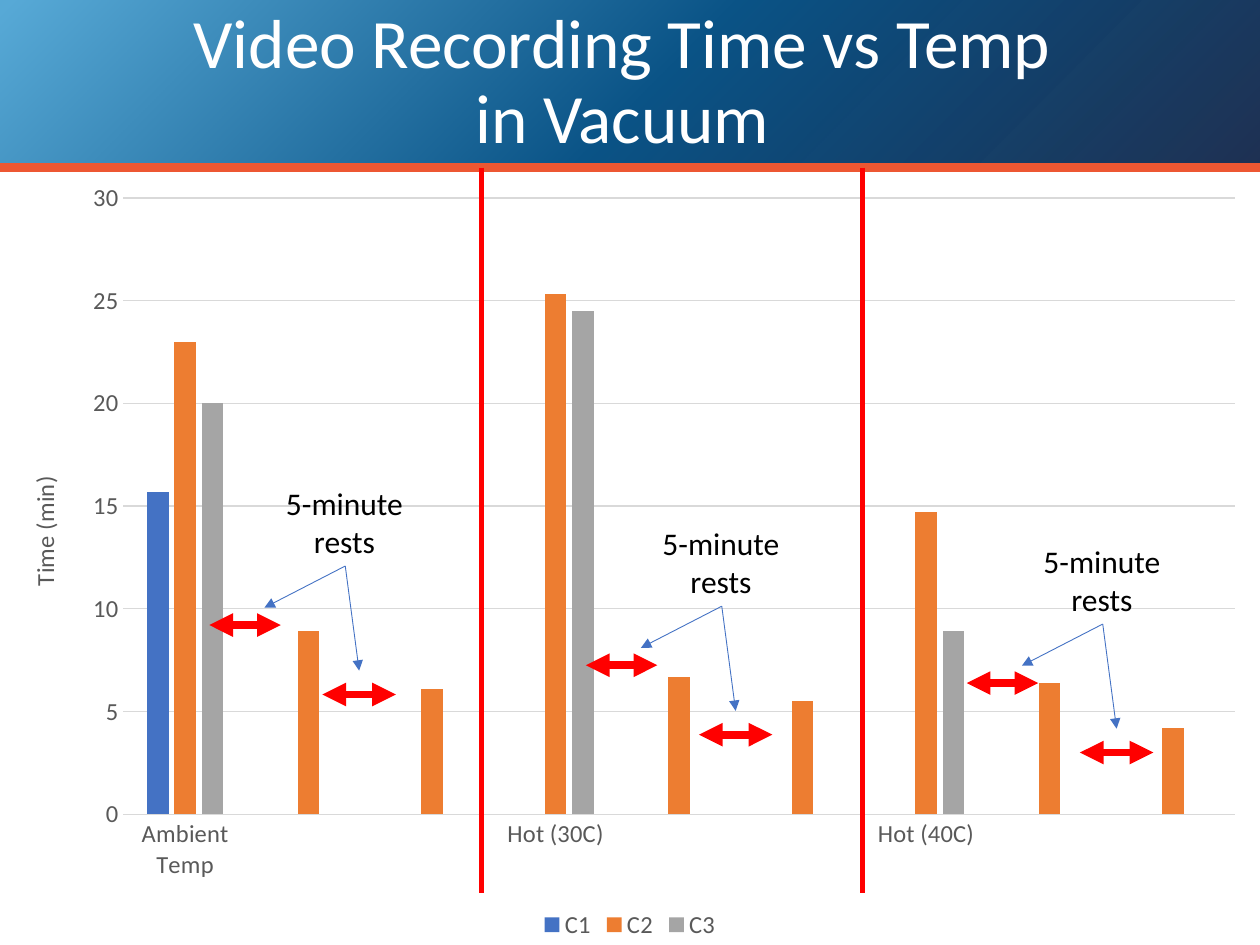
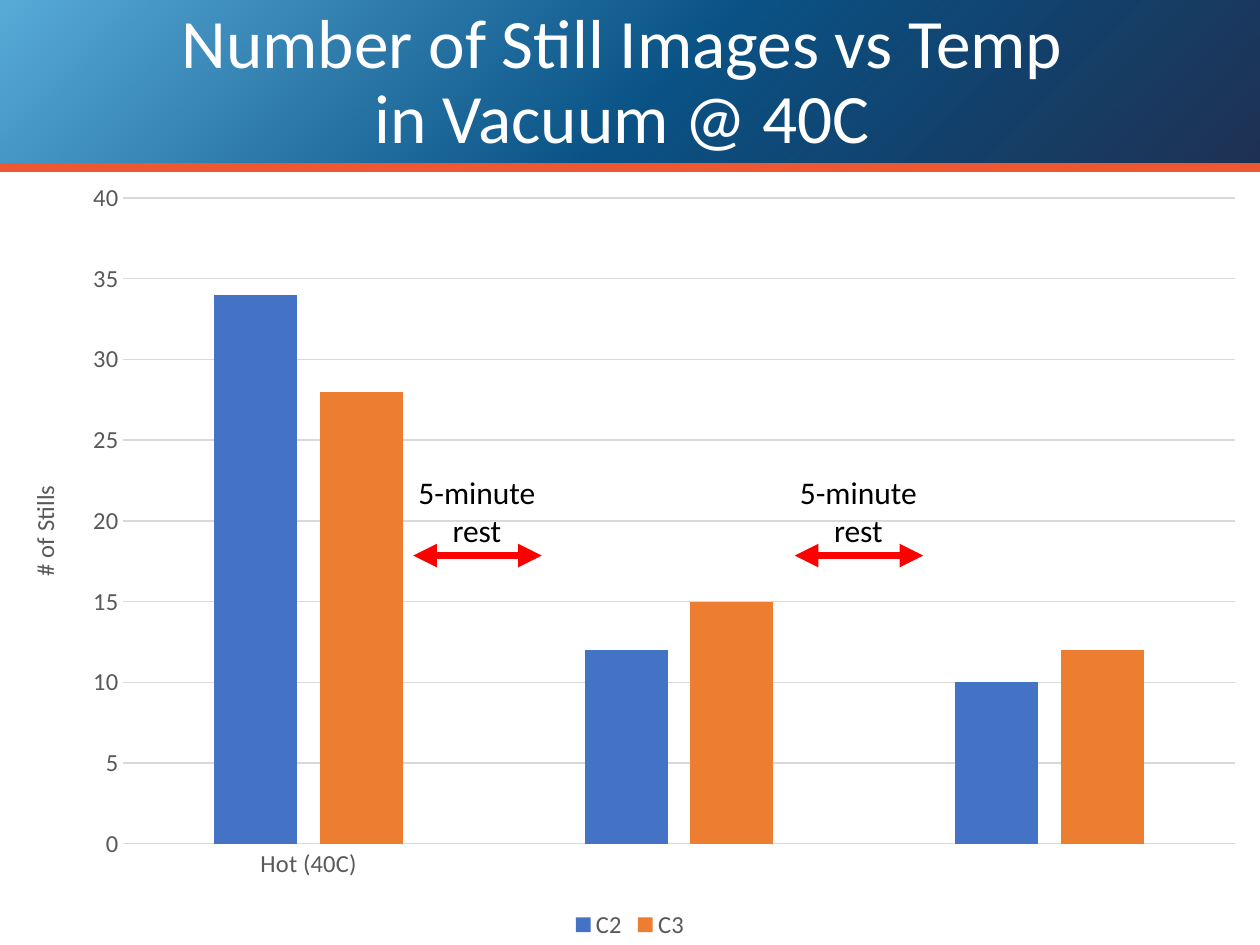
"""Build two slides charting camera endurance against temperature in vacuum."""
from lxml import etree
from pptx import Presentation
from pptx.chart import data as chart_data
from pptx.dml.color import RGBColor
from pptx.enum import chart as chart_enum, shapes, text
from pptx.oxml import parse_xml
from pptx.oxml.ns import nsdecls, qn
from pptx.util import Cm, Pt

FONT = "Calibri"
HEX = {
    "white": "FFFFFF", "black": "000000", "grey": "595959", "grid": "D9D9D9",
    "navy": "192C4E", "ocean": "0A5386", "sky": "57A9D6", "rule": "ED5732",
    "red": "FF0000", "blue": "4472C4", "orange": "ED7D31", "silver": "A5A5A5",
}
COLORS = {name: RGBColor.from_string(value) for name, value in HEX.items()}


def add_line(slide, start, end, color, width, arrows=()):
    points = [Cm(value) for value in (*start, *end)]
    connector = slide.shapes.add_connector(shapes.MSO_CONNECTOR.STRAIGHT, *points)
    connector.line.color.rgb = COLORS[color]
    connector.line.width = Pt(width)
    properties = connector.element.spPr
    for arrow in arrows:
        etree.SubElement(properties.find(qn("a:ln")), qn(f"a:{arrow}"), type="triangle")
    etree.SubElement(properties, qn("a:effectLst"))
    return connector


def add_label(slide, left, top, wording):
    box = slide.shapes.add_textbox(Cm(left), Cm(top), Cm(3.07), Cm(1.8))
    box.text_frame.word_wrap = True
    box.text_frame.text = wording
    paragraph = box.text_frame.paragraphs[0]
    paragraph.alignment = text.PP_ALIGN.CENTER
    paragraph.font.name = FONT
    paragraph.font.size = Pt(18)
    paragraph.font.color.rgb = COLORS["black"]


presentation = Presentation()
presentation.slide_width, presentation.slide_height = Cm(25.4), Cm(19.05)
layout = presentation.slide_layouts[5]

pages = [
    {
        "title": "Video Recording Time vs Temp in Vacuum",
        "axis": "Time (min)", "maximum": 30, "plot_height": 0.793,
        "categories": ["Ambient Temp", "", "", "Hot (30C)", "", "", "Hot (40C)", "", ""],
        "series": [
            ("C1", "blue", [15.7] + [None] * 8),
            ("C2", "orange", [23, 8.9, 6.1, 25.3, 6.7, 5.5, 14.7, 6.4, 4.2]),
            ("C3", "silver", [20, None, None, 24.5, None, None, 8.9, None, None]),
        ],
        "label": "5-minute rests",
        "labels": [(5.41, 9.63), (13, 10.44), (20.68, 10.8)],
        "rests": [(-1.19, 0.25, 2.97), (1.09, 2.57, 4.37)],
        "leaders": [(-0.08, 2.62), (1.83, 3.89)],
        "dividers": [9.7, 17.38],
    },
    {
        "title": "Number of Still Images vs Temp in Vacuum @ 40C",
        "axis": "# of Stills", "maximum": 40, "plot_height": 0.831,
        "categories": ["Hot (40C)", "", ""],
        "series": [("C2", "blue", [34, 12, 10]), ("C3", "orange", [28, 15, 12])],
        "label": "5-minute rest",
        "labels": [(8.08, 9.42), (15.77, 9.42)],
        "rests": [(0.25, 2.84, 1.78)],
        "leaders": [],
        "dividers": [],
    },
]
slides = [presentation.slides.add_slide(layout) for page in pages]

band = slides[0].shapes.add_shape(shapes.MSO_SHAPE.RECTANGLE, 0, 0, Cm(25.4), Cm(3.3))
band.shadow.inherit = False
band.line.fill.background()
stops = "".join(
    f'<a:gs pos="{position}000"><a:srgbClr val="{HEX[color]}">'
    f'<a:alpha val="{alpha}000"/></a:srgbClr></a:gs>'
    for position, color, alpha in ((0, "navy", 97), (48, "ocean", 100), (99, "sky", 100))
)
band.element.spPr.insert(2, parse_xml(
    f'<a:gradFill {nsdecls("a")} rotWithShape="1"><a:gsLst>{stops}</a:gsLst>'
    '<a:path path="circle"><a:fillToRect l="100000" t="100000"/></a:path></a:gradFill>'
))
rule = add_line(slides[0], (0, 3.38), (25.4, 3.38), "rule", 5)
for index, shape in enumerate((band, rule), start=2):
    layout.shapes.element.insert(index, shape.element)

for slide, page in zip(slides, pages):
    title = slide.shapes.title
    title.left, title.top, title.width, title.height = Cm(3.17), 0, Cm(18.75), Cm(3.38)
    title.text_frame.text = page["title"]
    title.text_frame.auto_size = text.MSO_AUTO_SIZE.NONE
    title.text_frame.vertical_anchor = text.MSO_ANCHOR.MIDDLE
    paragraph = title.text_frame.paragraphs[0]
    paragraph.alignment = text.PP_ALIGN.CENTER
    paragraph.line_spacing = 0.9
    paragraph.font.name = FONT
    paragraph.font.size = Pt(39.6)
    paragraph.font.color.rgb = COLORS["white"]

    table = chart_data.CategoryChartData()
    table.categories = page["categories"]
    for name, color, values in page["series"]:
        table.add_series(name, values)
    chart = slide.shapes.add_chart(
        chart_enum.XL_CHART_TYPE.COLUMN_CLUSTERED, 0, Cm(3.38), Cm(25.4), Cm(15.67), table
    ).chart
    chart.has_title = False
    chart.font.name = FONT
    chart.font.size = Pt(14)
    chart.font.color.rgb = COLORS["grey"]
    chart.has_legend = True
    chart.legend.position = chart_enum.XL_LEGEND_POSITION.BOTTOM
    chart.legend.include_in_layout = False
    plot = chart.plots[0]
    plot.gap_width, plot.overlap = 219, -27
    plot.vary_by_categories = False
    for series, (name, color, values) in zip(plot.series, page["series"]):
        series.format.fill.solid()
        series.format.fill.fore_color.rgb = COLORS[color]

    value_axis, category_axis = chart.value_axis, chart.category_axis
    for axis in (value_axis, category_axis):
        axis.major_tick_mark = chart_enum.XL_TICK_MARK.NONE
    value_axis.minimum_scale, value_axis.maximum_scale = 0, page["maximum"]
    value_axis.major_unit = 5
    value_axis.format.line.fill.background()
    for line in (value_axis.major_gridlines.format.line, category_axis.format.line):
        line.color.rgb = COLORS["grid"]
        line.width = Pt(0.75)
    value_axis.axis_title.text_frame.text = page["axis"]
    axis_font = value_axis.axis_title.text_frame.paragraphs[0].font
    axis_font.name, axis_font.size, axis_font.bold = FONT, Pt(14), False
    axis_font.color.rgb = COLORS["grey"]

    plot_area = chart.element.chart.plotArea
    for old_layout in plot_area.findall(qn("c:layout")):
        plot_area.remove(old_layout)
    plot_layout = etree.Element(qn("c:layout"))
    manual = etree.SubElement(plot_layout, qn("c:manualLayout"))
    for tag, value in (
        ("layoutTarget", "inner"), ("xMode", "edge"), ("yMode", "edge"),
        ("x", 0.098), ("y", 0.039), ("w", 0.882), ("h", page["plot_height"]),
    ):
        etree.SubElement(manual, qn(f"c:{tag}"), val=str(value))
    plot_area.insert(0, plot_layout)

    for left, top in page["labels"]:
        add_label(slide, left, top, page["label"])
        for start, end, drop in page["rests"]:
            add_line(slide, (left + start, top + drop), (left + end, top + drop),
                     "red", 4.5, ("headEnd", "tailEnd"))
        for across, drop in page["leaders"]:
            add_line(slide, (left + 1.55, top + 1.78), (left + across, top + drop),
                     "blue", 0.5, ("tailEnd",))
    for left in page["dividers"]:
        add_line(slide, (left, 3.38), (left, 18), "red", 3)

presentation.save("out.pptx")
